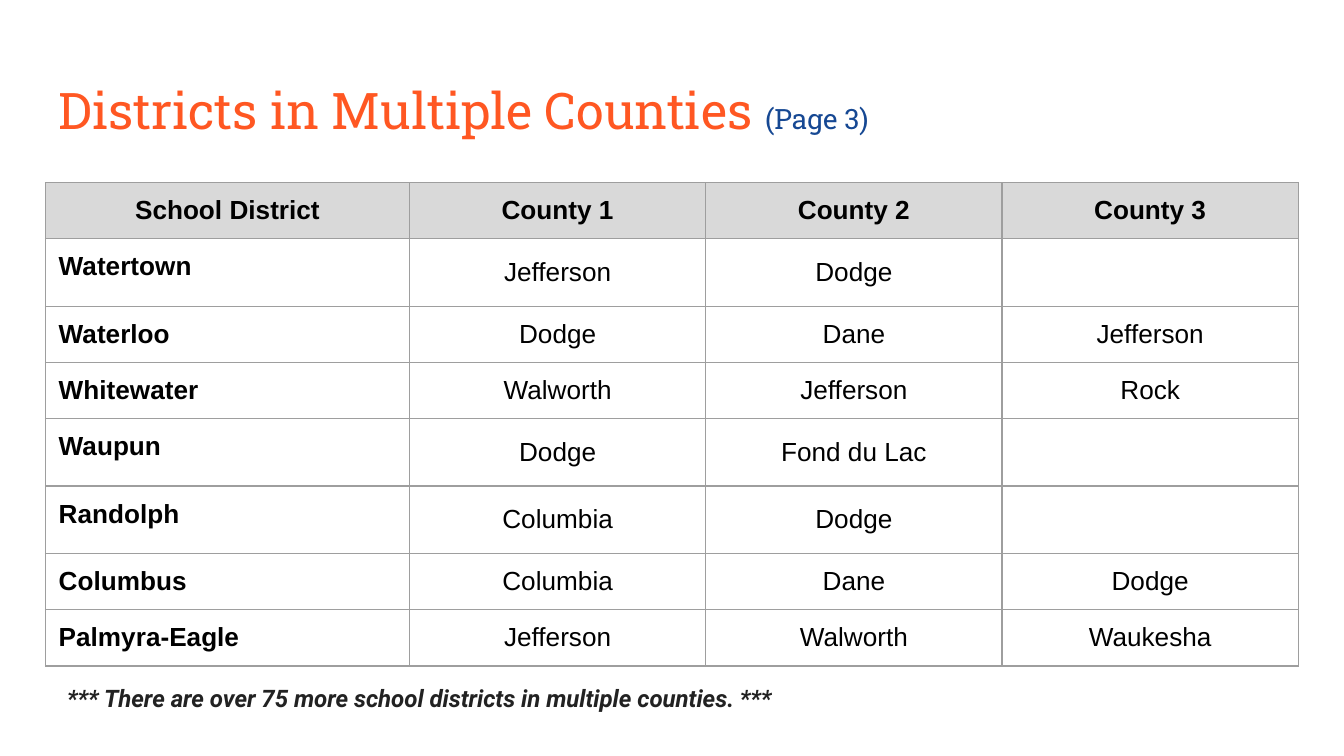
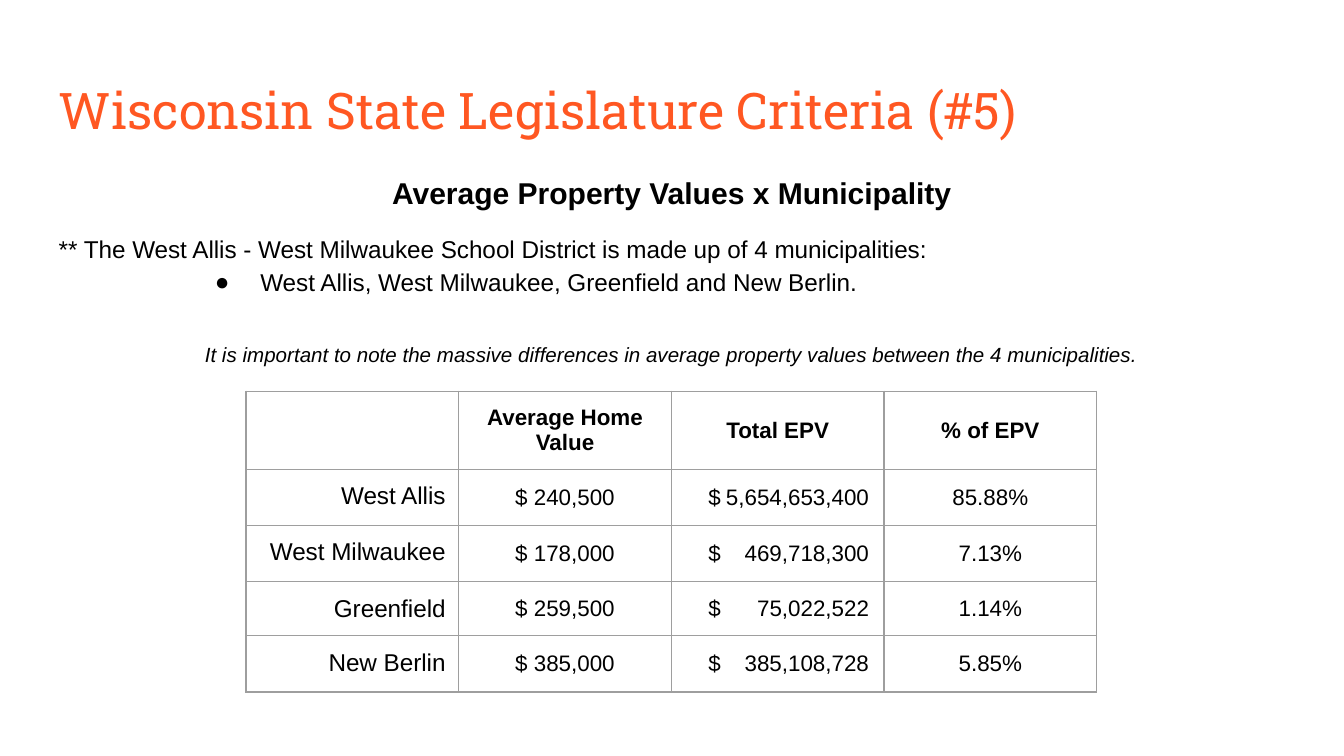
from lxml import etree
from pptx import Presentation
from pptx import util as u
from pptx.dml import color
from pptx.enum import text
from pptx.oxml import parse_xml
from pptx.oxml import ns

ORANGE, NAVY, BLACK, CHARCOAL = "FF5722", "164893", "000000", "222222"
HEADER_GREY, RULE_GREY, WHITE = "D9D9D9", "9E9E9E", "FFFFFF"
LEFT, CENTER, RIGHT = text.PP_ALIGN.LEFT, text.PP_ALIGN.CENTER, text.PP_ALIGN.RIGHT
TOP, MIDDLE = text.MSO_ANCHOR.TOP, text.MSO_ANCHOR.MIDDLE
MARGIN = u.Cm(0.25)
RULE = (
    f'<a:{{side}} {ns.nsdecls("a")} w="9525"><a:solidFill>'
    f'<a:srgbClr val="{RULE_GREY}"/></a:solidFill></a:{{side}}>'
)


def rgb(hex_value):
    return color.RGBColor.from_string(hex_value)


def write(paragraph, words, size, font="Arial", hue=BLACK, bold=False, italic=False, **layout):
    run = paragraph.add_run()
    run.text = words
    run.font.color.rgb = rgb(hue)
    looks = {"size": u.Pt(size), "name": font, "bold": bold, "italic": italic}
    for key, value in looks.items():
        setattr(run.font, key, value)
    for key, value in layout.items():
        setattr(paragraph, key, value)


deck = Presentation()
deck.slide_width, deck.slide_height = u.Cm(25.4), u.Cm(14.28)

title_place = (0.86, 1.24, 23.67, 1.6)
pages = [
    {
        "title": [("Districts in Multiple Counties ", 27, "Roboto Slab", ORANGE),
                  ("(Page 3)", 15, "Roboto Slab", NAVY)],
        "body_place": (1.02, 12.7, 16, 1.04),
        "body": [
            ("*** There are over 75 more school districts in multiple counties. ***",
             {"size": 12.9, "font": "Roboto", "hue": CHARCOAL, "bold": True, "italic": True,
              "line_spacing": 0.95, "space_after": u.Pt(12)}),
        ],
        "table_place": (0.86, 3.45),
        "columns": [6.88, 5.6, 5.6, 5.6],
        "row_heights": [1.06] * 8,
        "header_fill": HEADER_GREY,
        "header_size": 14,
        "aligns": [LEFT, CENTER, CENTER, CENTER],
        "sizes": [14, 14, 14, 14],
        "bold_names": True,
        "rows": [
            ("School District", "County 1", "County 2", "County 3"),
            ("Watertown", "Jefferson", "Dodge", ""),
            ("Waterloo", "Dodge", "Dane", "Jefferson"),
            ("Whitewater", "Walworth", "Jefferson", "Rock"),
            ("Waupun", "Dodge", "Fond du Lac", ""),
            ("Randolph", "Columbia", "Dodge", ""),
            ("Columbus", "Columbia", "Dane", "Dodge"),
            ("Palmyra-Eagle", "Jefferson", "Walworth", "Waukesha"),
        ],
    },
    {
        "title": [("Wisconsin State Legislature Criteria (#5)", 27, "Roboto Slab", ORANGE)],
        "body_place": (0.86, 2.95, 23.67, 10.11),
        "body": [
            ("Average Property Values x Municipality",
             {"size": 16.1, "bold": True, "alignment": CENTER,
              "line_spacing": 1.15, "space_before": u.Pt(10)}),
            ("** The West Allis - West Milwaukee School District is made up of 4 municipalities:",
             {"size": 13, "line_spacing": 1.15, "space_before": u.Pt(10)}),
            ("West Allis, West Milwaukee, Greenfield and New Berlin.",
             {"size": 13, "line_spacing": 1.15, "bullet": True}),
            ("It is important to note the massive differences in average property values "
             "between the 4 municipalities.",
             {"size": 11, "italic": True, "alignment": CENTER, "space_before": u.Pt(24.5)}),
        ],
        "table_place": (4.65, 7.39),
        "columns": [4.02] * 4,
        "row_heights": [1.48, 1.06, 1.06, 1.02, 1.06],
        "header_fill": None,
        "header_size": 12,
        "aligns": [RIGHT, CENTER, LEFT, CENTER],
        "sizes": [13, 12, 12, 12],
        "bold_names": False,
        "rows": [
            ("", "Average Home Value", "Total EPV", "% of EPV"),
            ("West Allis", "$ 240,500", "$\t5,654,653,400", "85.88%"),
            ("West Milwaukee", "$ 178,000", "$\t469,718,300", "7.13%"),
            ("Greenfield", "$ 259,500", "$\t75,022,522", "1.14%"),
            ("New Berlin", "$ 385,000", "$\t385,108,728", "5.85%"),
        ],
    },
]

for page in pages:
    slide = deck.slides.add_slide(deck.slide_layouts[1])
    slide.background.fill.solid()
    slide.background.fill.fore_color.rgb = rgb(WHITE)
    heading, body = slide.placeholders

    for holder, place in ((heading, title_place), (body, page["body_place"])):
        for key, value in zip(("left", "top", "width", "height"), place):
            setattr(holder, key, u.Cm(value))
        frame_format = {
            "margin_left": MARGIN, "margin_right": MARGIN,
            "margin_top": MARGIN, "margin_bottom": MARGIN,
            "word_wrap": True, "vertical_anchor": TOP,
            "auto_size": text.MSO_AUTO_SIZE.NONE,
        }
        for key, value in frame_format.items():
            setattr(holder.text_frame, key, value)

    for words, size, font, hue in page["title"]:
        write(heading.text_frame.paragraphs[0], words, size, font, hue, alignment=LEFT)

    for index, (words, style) in enumerate(page["body"]):
        frame = body.text_frame
        paragraph = frame.add_paragraph() if index else frame.paragraphs[0]
        defaults = {"alignment": LEFT, "space_before": u.Pt(0), "line_spacing": 1.0}
        chosen = {**defaults, **style}
        bulleted = chosen.pop("bullet", False)
        write(paragraph, words, **chosen)
        props = paragraph._p.get_or_add_pPr()
        props.set("marL", str(u.Cm(3.81) if bulleted else 0))
        props.set("indent", str(u.Cm(-0.86) if bulleted else 0))
        if bulleted:
            tint = etree.SubElement(props, ns.qn("a:buClr"))
            etree.SubElement(tint, ns.qn("a:srgbClr"), val=BLACK)
            etree.SubElement(props, ns.qn("a:buChar"), char="●")
        else:
            etree.SubElement(props, ns.qn("a:buNone"))

    rows, columns, heights = page["rows"], page["columns"], page["row_heights"]
    x, y = page["table_place"]
    table = slide.shapes.add_table(
        len(rows), len(columns), u.Cm(x), u.Cm(y), u.Cm(sum(columns)), u.Cm(sum(heights))
    ).table
    table.first_row = table.horz_banding = False
    for column, width in zip(table.columns, columns):
        column.width = u.Cm(width)

    for r, (row, entries) in enumerate(zip(table.rows, rows)):
        row.height = u.Cm(heights[r])
        for c, (cell, entry) in enumerate(zip(row.cells, entries)):
            ledger = "\t" in entry
            cell_format = {
                "margin_left": u.Cm(0.7) if ledger else MARGIN, "margin_right": MARGIN,
                "margin_top": MARGIN, "margin_bottom": MARGIN,
                "vertical_anchor": MIDDLE if r == 0 or c else TOP,
            }
            for key, value in cell_format.items():
                setattr(cell, key, value)
            borders = cell._tc.get_or_add_tcPr()
            for side in ("lnL", "lnR", "lnT", "lnB"):
                borders.append(parse_xml(RULE.format(side=side)))
            if r == 0 and page["header_fill"]:
                cell.fill.solid()
                cell.fill.fore_color.rgb = rgb(page["header_fill"])
            else:
                cell.fill.background()
            if not entry:
                continue
            paragraph = cell.text_frame.paragraphs[0]
            write(
                paragraph, entry,
                page["sizes"][c] if r else page["header_size"],
                bold=r == 0 or (c == 0 and page["bold_names"]),
                alignment=page["aligns"][c] if r else CENTER,
            )
            if ledger:
                stops = etree.SubElement(paragraph._p.get_or_add_pPr(), ns.qn("a:tabLst"))
                etree.SubElement(stops, ns.qn("a:tab"), pos=str(u.Cm(3.04)), algn="r")

deck.save("out.pptx")
